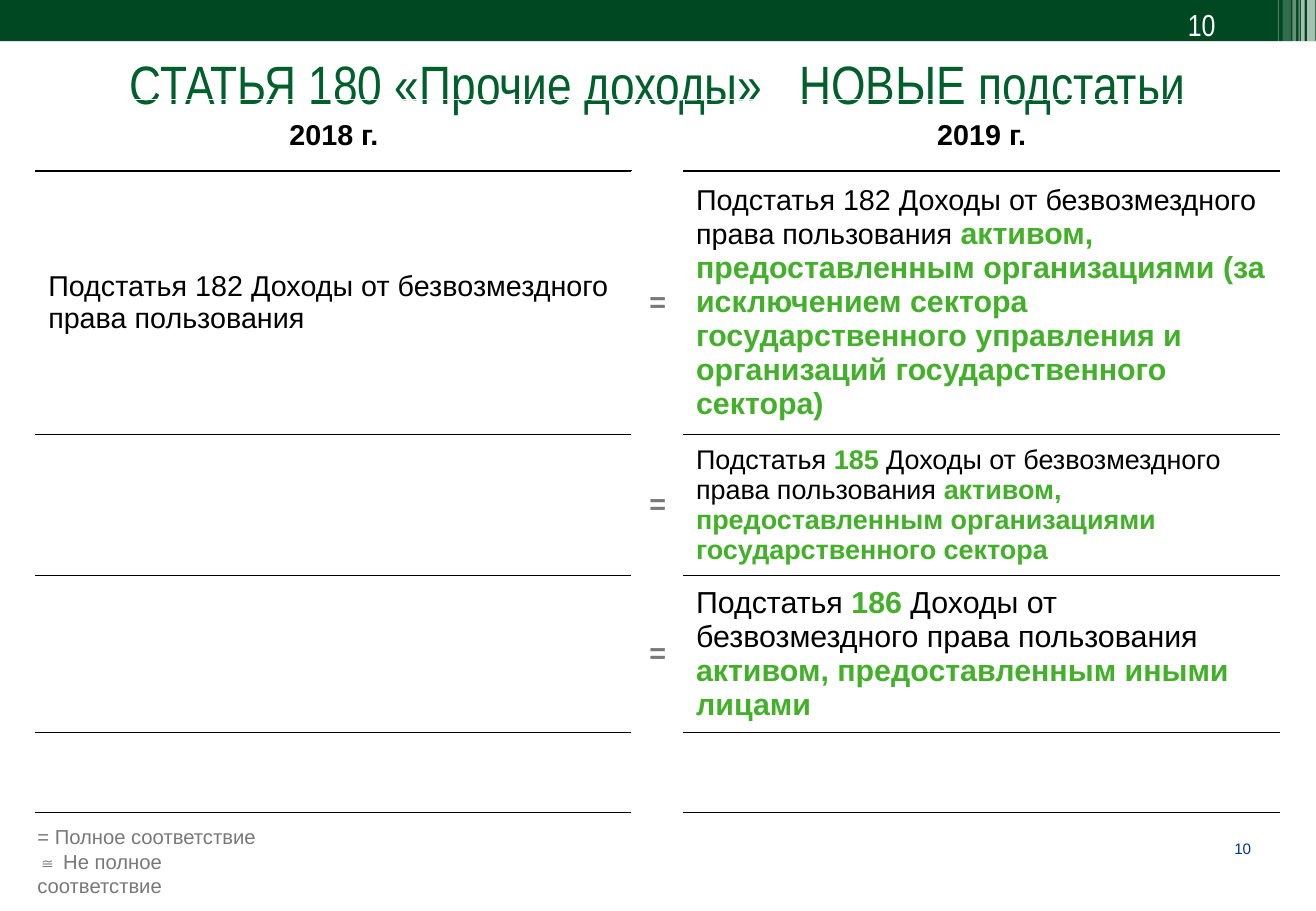
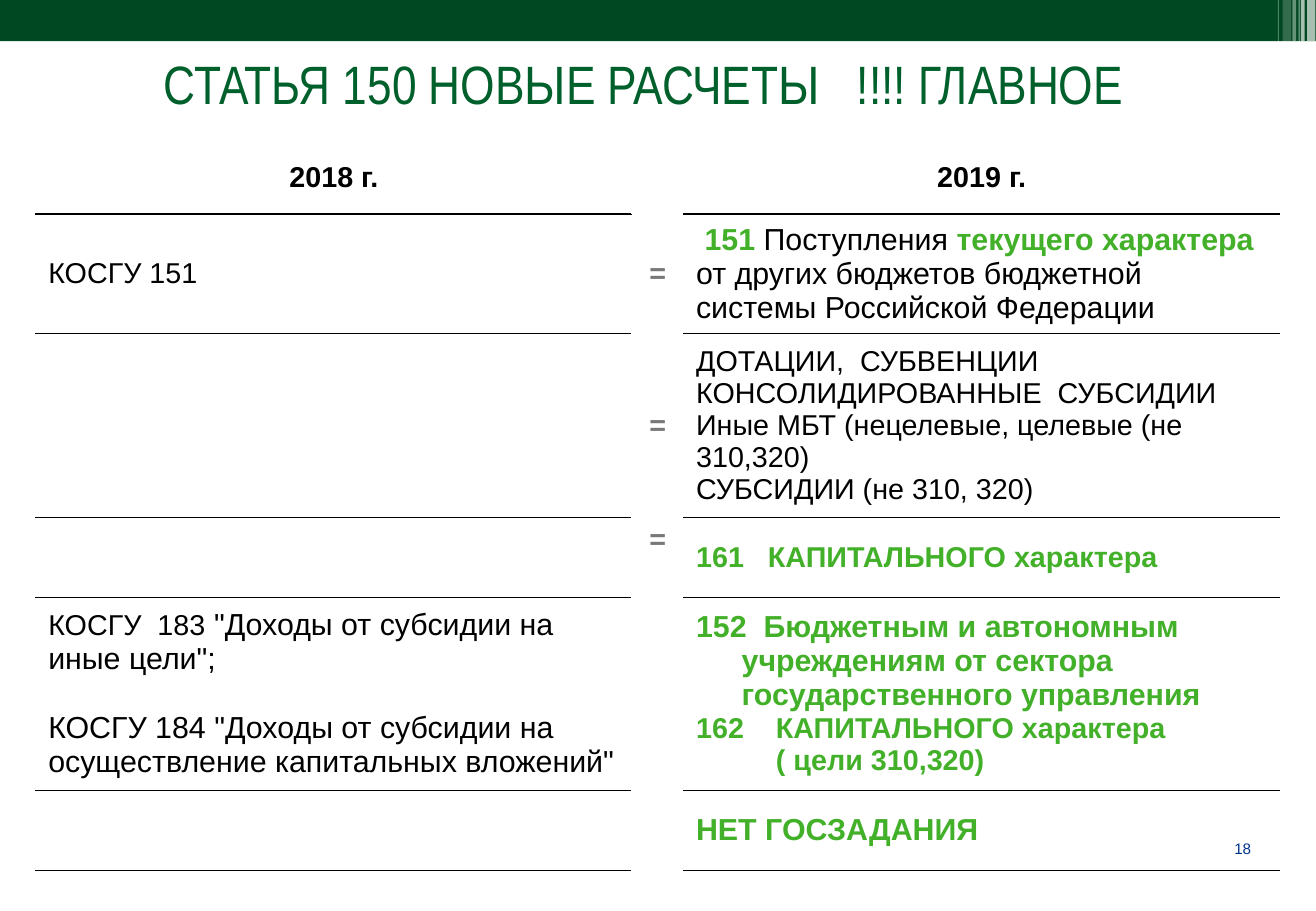
"""Build two slides comparing the 2018 and 2019 income articles."""
from lxml import etree
from pptx import Presentation
from pptx.dml.color import RGBColor
from pptx.enum.shapes import MSO_SHAPE
from pptx.enum.text import MSO_ANCHOR, MSO_AUTO_SIZE, PP_ALIGN
from pptx.oxml.ns import qn
from pptx.util import Pt

RECTANGLE = MSO_SHAPE.RECTANGLE
TOP, MIDDLE = MSO_ANCHOR.TOP, MSO_ANCHOR.MIDDLE
LEFT, CENTER, RIGHT = PP_ALIGN.LEFT, PP_ALIGN.CENTER, PP_ALIGN.RIGHT
NO_AUTOFIT = MSO_AUTO_SIZE.NONE

COLORS = {
    "band": "004821", "title": "00602B", "accent": "43B02A", "text": "000000",
    "muted": "787878", "page": "00338D", "white": "FFFFFF",
}
BODY, NARROW = "Arial", "Arial Narrow"
SLIDE_WIDTH, SLIDE_HEIGHT = 780, 540
BAND_HEIGHT = 24.5
STRIPES = [
    (774.7, 5, 65), (771.1, 2.2, 65), (769.7, 0.7, 60),
    (766.1, 2.2, 40), (760.3, 5, 20), (757.4, 0.7, 30),
]
TABLE_LEFT = 21.4
COLUMNS = [353, 31, 353]


def plain(text, size=17):
    return text, size, "text", False


def new(text, size=18):
    return text, size, "accent", True


def line(*spans, **layout):
    return {"spans": spans, **layout}


EQUALS = [line(("=", 17, "muted", True), align=CENTER)]
HEADER = [[line((year, 17, "text", True), align=CENTER)] if year else []
          for year in ("2018 г.", "", "2019 г.")]
USE_RIGHT = " Доходы от безвозмездного права пользования "

SLIDES = [
    {
        "title": "СТАТЬЯ 180 «Прочие доходы»   НОВЫЕ подстатьи",
        "title_width": 780, "number": "10", "header_number": True,
        "legend": ["= Полное соответствие", "≅ Не полное соответствие"],
        "top": 59, "heights": [42.5, 156, 83.5, 93, 47.5], "raised_row": None,
        "rows": [
            HEADER,
            [[line(plain("Подстатья 182 Доходы от безвозмездного права пользования"))],
             EQUALS,
             [line(plain("Подстатья 182" + USE_RIGHT),
                   new("активом, предоставленным организациями (за исключением сектора "
                       "государственного управления и организаций государственного сектора)"))]],
            [[], EQUALS,
             [line(plain("Подстатья ", 16), new("185", 16), plain(USE_RIGHT, 16),
                   new("активом, предоставленным организациями государственного сектора", 16))]],
            [[], EQUALS,
             [line(plain("Подстатья ", 18), new("186"), plain(USE_RIGHT, 18),
                   new("активом, предоставленным иными лицами"))]],
            [[], [], []],
        ],
    },
    {
        "title": "СТАТЬЯ 150 НОВЫЕ РАСЧЕТЫ   !!!! ГЛАВНОЕ",
        "title_width": 763.5, "number": "18", "header_number": False, "legend": [],
        "top": 84.2, "heights": [42.5, 71.2, 108.7, 47.4, 114.4, 47.4], "raised_row": 3,
        "rows": [
            HEADER,
            [[line(plain("КОСГУ 151"))], EQUALS,
             [line(new(" 151 "), plain("Поступления ", 18), new("текущего характера "),
                   plain("от других бюджетов бюджетной системы Российской Федерации", 18))]],
            [[], EQUALS,
             [line(plain(text)) for text in (
                 "ДОТАЦИИ,  СУБВЕНЦИИ", "КОНСОЛИДИРОВАННЫЕ  СУБСИДИИ",
                 "Иные МБТ (нецелевые, целевые (не 310,320)", "СУБСИДИИ (не 310, 320)")]],
            [[], EQUALS, [line(new("161   КАПИТАЛЬНОГО характера", 17))]],
            [[line(plain("КОСГУ  183"), plain(" \"Доходы от субсидии на иные цели\";", 18)),
              line(plain("КОСГУ 184 \"Доходы от субсидии на осуществление капитальных "
                         "вложений\"", 18), before=20.7)],
             [],
             [line(new("  Бюджетным и автономным учреждениям от сектора "
                       "государственного управления"), start=152),
              line(new("    КАПИТАЛЬНОГО характера", 17), start=162),
              line(new("( цели 310,320)", 17), indent=47.3)]],
            [[], [], [line(new("НЕТ ГОСЗАДАНИЯ"))]],
        ],
    },
]


def color(name):
    return RGBColor.from_string(COLORS[name])


def style(font, size, ink, bold=False, face=BODY):
    font.name, font.size, font.bold = face, Pt(size), bold
    font.color.rgb = color(ink)


def add_band(page, layout):
    """Draw the top band and its stripes, then hand them to the layout."""
    bars = [(0, SLIDE_WIDTH, "band", 100)]
    bars += [(left, width, "white", alpha) for left, width, alpha in reversed(STRIPES)]
    for index, (left, width, ink, alpha) in enumerate(bars):
        bar = page.shapes.add_shape(RECTANGLE, Pt(left), 0, Pt(width), Pt(BAND_HEIGHT))
        bar.shadow.inherit = False
        bar.line.fill.background()
        bar.fill.solid()
        bar.fill.fore_color.rgb = color(ink)
        if alpha < 100:
            fill = bar.element.find(".//" + qn("a:srgbClr"))
            etree.SubElement(fill, qn("a:alpha"), val=str(alpha * 1000))
        bar.element.find(".//" + qn("p:cNvPr")).set("id", str(100 + index))
        layout.shapes.element.append(bar.element)


def add_text(page, lines, place, size, ink, face=BODY, align=LEFT, insets=(7.2, 3.6, 7.2)):
    box = page.shapes.add_textbox(*map(Pt, place))
    frame = box.text_frame
    frame.word_wrap = True
    frame.margin_left, frame.margin_top, frame.margin_right = map(Pt, insets)
    frame.text = "\n".join(lines)
    for para in frame.paragraphs:
        para.alignment = align
        style(para.font, size, ink, face=face)


def add_title(page, text, width):
    title = page.shapes.title
    title.left, title.top, title.width, title.height = map(Pt, (0, 26.6, width, 46))
    frame = title.text_frame
    frame.text = text
    frame.auto_size = NO_AUTOFIT
    frame.vertical_anchor = TOP
    para = frame.paragraphs[0]
    para.alignment = CENTER
    style(para.font, 32, "title", face=NARROW)


def set_layout(para, layout):
    """Apply alignment, spacing, indents and numbering to a paragraph."""
    para.alignment = layout.get("align", LEFT)
    if "before" in layout:
        para.space_before = Pt(layout["before"])
    properties = para._p.get_or_add_pPr()
    if "indent" in layout:
        properties.set("marL", str(Pt(layout["indent"])))
    if "start" in layout:
        properties.set("marL", str(Pt(27)))
        properties.set("indent", str(Pt(-27)))
        number = etree.Element(qn("a:buAutoNum"), type="arabicPlain",
                               startAt=str(layout["start"]))
        properties.insert(0, number)


def fill_cell(cell, lines):
    frame = cell.text_frame
    for index, content in enumerate(lines):
        para = frame.add_paragraph() if index else frame.paragraphs[0]
        spans = content["spans"]
        for text, *look in spans:
            span = para.add_run()
            span.text = text
            style(para.font if len(spans) == 1 else span.font, *look)
        set_layout(para, content)


def add_border(cell, side, width, ink):
    border = etree.SubElement(cell._tc.get_or_add_tcPr(), qn("a:" + side),
                              w=str(Pt(width)))
    fill = etree.SubElement(border, qn("a:solidFill"))
    etree.SubElement(fill, qn("a:srgbClr"), val=COLORS[ink])


def rule_cell(cell, row, column):
    """Rule the outer columns in black, heavier under the header."""
    for side, edge in (("lnT", row), ("lnB", row + 1)):
        ink = "white" if column == 1 or edge == 0 else "text"
        add_border(cell, side, 1.5 if edge == 1 and ink == "text" else 0.5, ink)


def add_comparison(page, content):
    rows, heights = content["rows"], content["heights"]
    table = page.shapes.add_table(
        len(rows), len(COLUMNS), Pt(TABLE_LEFT), Pt(content["top"]),
        Pt(sum(COLUMNS)), Pt(sum(heights))).table
    table.first_row = table.horz_banding = False
    for column, width in zip(table.columns, COLUMNS):
        column.width = Pt(width)
    for row, (cells, height) in enumerate(zip(rows, heights)):
        table.rows[row].height = Pt(height)
        for column, lines in enumerate(cells):
            cell = table.cell(row, column)
            rule_cell(cell, row, column)
            cell.fill.background()
            raised = column == 1 and row == content["raised_row"]
            cell.vertical_anchor = TOP if raised else MIDDLE
            fill_cell(cell, lines)


def main():
    deck = Presentation()
    deck.slide_width, deck.slide_height = Pt(SLIDE_WIDTH), Pt(SLIDE_HEIGHT)
    layout = deck.slide_layouts[5]
    for index, content in enumerate(SLIDES):
        page = deck.slides.add_slide(layout)
        if index == 0:
            add_band(page, layout)
        add_title(page, content["title"], content["title_width"])
        add_comparison(page, content)
        number = [content["number"]]
        add_text(page, number, (710.6, 497.5, 31, 11.5), 9, "page",
                 align=RIGHT, insets=(0, 0, 0))
        if content["header_number"]:
            add_text(page, number, (697, 0, 65, 29), 18, "white", face=NARROW)
        if content["legend"]:
            add_text(page, content["legend"], (15.1, 485.3, 161, 36), 12, "muted",
                     insets=(7.2, 3.6, 18))
    deck.save("out.pptx")


if __name__ == "__main__":
    main()
